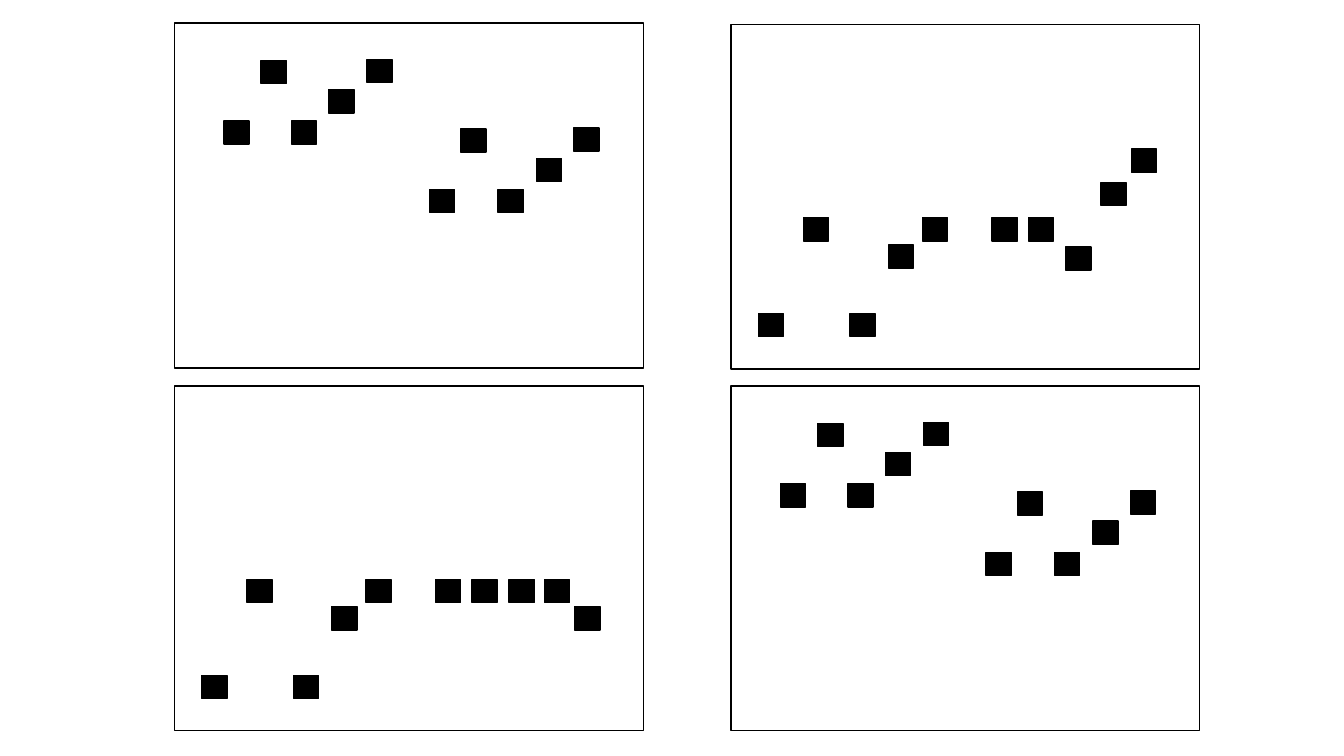
from pptx import Presentation
from pptx.dml.color import RGBColor
from pptx.enum.shapes import MSO_SHAPE
from pptx.util import Inches, Pt

RECT = MSO_SHAPE.RECTANGLE
BLANK = 6
COLORS = {"panel": "FFFFFF", "mark": "000000", "line": "000000"}

# Mark offsets from the top left corner of a panel, in inches
STEPS = [(0.49, 0.97), (0.86, 0.37), (1.16, 0.97), (1.53, 0.66), (1.91, 0.36),
         (2.53, 1.65), (2.84, 1.05), (3.21, 1.65), (3.59, 1.34), (3.96, 1.04)]
START = [(0.27, 2.87), (0.72, 1.92), (1.18, 2.87), (1.56, 2.19), (1.9, 1.92),
         (2.59, 1.92), (2.95, 1.92)]
FLAT = START + [(3.32, 1.92), (3.67, 1.92), (3.97, 2.19)]
RISE = START + [(3.32, 2.21), (3.67, 1.57), (3.97, 1.24)]

# Panels: left, top, marks
PANELS = [
    (1.73, 0.23, STEPS),
    (7.25, 3.83, STEPS),
    (1.73, 3.83, FLAT),
    (7.25, 0.24, RISE),
]
PANEL = (4.65, 3.42)
MARK = (0.25, 0.23)


def add_box(group, left, top, size, fill):
    box = group.shapes.add_shape(
        RECT, Inches(left), Inches(top), *map(Inches, size))
    box.shadow.inherit = False
    box.fill.solid()
    box.fill.fore_color.rgb = RGBColor.from_string(COLORS[fill])
    box.line.color.rgb = RGBColor.from_string(COLORS["line"])
    box.line.width = Pt(1)


def main():
    deck = Presentation()
    deck.slide_width, deck.slide_height = Inches(13.33), Inches(7.5)
    slide = deck.slides.add_slide(deck.slide_layouts[BLANK])

    # One group per panel: the frame, then its marks
    for left, top, marks in PANELS:
        group = slide.shapes.add_group_shape()
        add_box(group, left, top, PANEL, "panel")
        for x, y in marks:
            add_box(group, left + x, top + y, MARK, "mark")

    deck.save("out.pptx")


if __name__ == "__main__":
    main()
